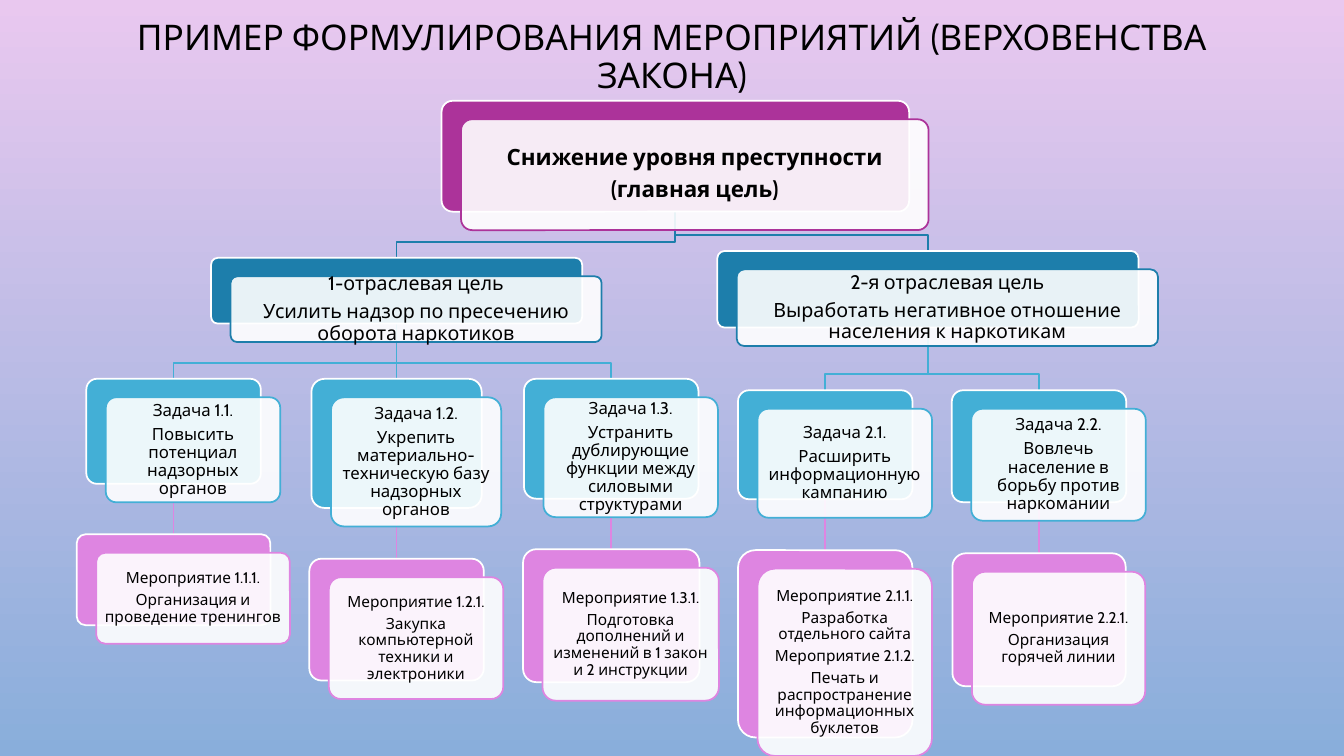
from dataclasses import dataclass, field
from typing import Iterator

import lxml.etree
import pptx
import pptx.dml.color
import pptx.enum.dml
import pptx.enum.shapes
import pptx.enum.text
import pptx.oxml.ns
import pptx.shapes.autoshape
import pptx.shapes.base
import pptx.slide
import pptx.text.text
import pptx.util

Pt = pptx.util.Pt
RGB = pptx.dml.color.RGBColor.from_string
qn = pptx.oxml.ns.qn


@dataclass(frozen=True)
class Level:
    color: str
    size: float
    bold: bool = False


@dataclass(frozen=True)
class Theme:
    font: str = "Cabin"
    text: str = "000000"
    card: str = "FFFFFF"
    card_opacity: int = 90
    bg_top: str = "E9C8EF"
    bg_bottom: str = "89AEDB"
    title_size: float = 25.2
    line_width: float = 1.25
    levels: tuple[Level, ...] = (
        Level("AC339A", 16, True),
        Level("1D7EAB", 14),
        Level("43AFD6", 12),
        Level("DE85E1", 11),
    )


@dataclass(frozen=True)
class Node:
    """A box of the goal tree, placed by its horizontal centre and its top."""
    center: float
    top: float
    width: float
    height: float
    lines: list[str]
    children: list["Node"] = field(default_factory=list)


THEME = Theme()
CARD_DX, CARD_DY = 13.9, 13.2
BEND = 11.4  # height of a bend above the child box

TITLE = "ПРИМЕР ФОРМУЛИРОВАНИЯ МЕРОПРИЯТИЙ (ВЕРХОВЕНСТВА ЗАКОНА)"

TREE = Node(482.4, 72, 334, 79.2, ["Снижение уровня преступности", "(главная цель)"], [
    Node(283.3, 184.2, 265, 46.9,
         ["1-отраслевая цель", "Усилить надзор по пресечению оборота наркотиков"], [
        Node(124, 270.6, 124.6, 75,
             ["Задача 1.1.", "Повысить потенциал надзорных органов"], [
            Node(124, 381.6, 138.4, 65,
                 ["Мероприятие 1.1.1.", "Организация и проведение тренингов"])]),
        Node(283.3, 270.6, 121.6, 92.2,
             ["Задача 1.2.", "Укрепить материально-техническую базу надзорных органов"], [
            Node(283.3, 399.1, 124.6, 87,
                 ["Мероприятие 1.2.1.", "Закупка компьютерной техники и электроники"])]),
        Node(436.6, 270.6, 124.6, 85.6,
             ["Задача 1.3.", "Устранить дублирующие функции между силовыми структурами"], [
            Node(436.6, 392.3, 126, 95,
                 ["Мероприятие 1.3.1.",
                  "Подготовка дополнений и изменений в 1 закон и 2 инструкции"])]),
    ]),
    Node(662.8, 179.2, 301, 54.8,
         ["2-я отраслевая цель", "Выработать негативное отношение населения к наркотикам"], [
        Node(589.5, 278.8, 124.6, 77.8,
             ["Задача 2.1.", "Расширить информационную кампанию"], [
            Node(589.5, 393, 124.6, 133.8,
                 ["Мероприятие 2.1.1.", "Разработка отдельного сайта",
                  "Мероприятие 2.1.2.",
                  "Печать и распространение информационных буклетов"])]),
        Node(742.2, 278.8, 124.6, 79.9,
             ["Задача 2.2.", "Вовлечь население в борьбу против наркомании"], [
            Node(742.2, 395.2, 123.8, 95,
                 ["Мероприятие 2.2.1.", "Организация горячей линии"])]),
    ]),
])


def walk(node: Node, depth: int = 0) -> Iterator[tuple[Node, Level]]:
    yield node, THEME.levels[depth]
    for child in node.children:
        yield from walk(child, depth + 1)


def write_text(tf: pptx.text.text.TextFrame, lines: list[str], *, size: float,
               bold: bool = False, space_after: float = 0) -> None:
    tf.word_wrap = True
    tf.vertical_anchor = pptx.enum.text.MSO_ANCHOR.MIDDLE
    for i, line in enumerate(lines):
        p = tf.add_paragraph() if i else tf.paragraphs[0]
        p.alignment = pptx.enum.text.PP_ALIGN.CENTER
        p.line_spacing = 0.9
        p.space_before = Pt(0)
        p.space_after = Pt(space_after)
        r = p.add_run()
        r.text = line
        r.font.name = THEME.font
        r.font.size = Pt(size)
        r.font.bold = bold
        r.font.color.rgb = RGB(THEME.text)


def set_line(sp: pptx.shapes.base.BaseShape, color: str) -> None:
    sp.line.color.rgb = RGB(color)
    sp.line.width = Pt(THEME.line_width)


def add_box(s: pptx.slide.Slide, left: float, top: float, width: float, height: float,
            fill: str, line: str) -> pptx.shapes.autoshape.Shape:
    sp = s.shapes.add_shape(pptx.enum.shapes.MSO_SHAPE.ROUNDED_RECTANGLE,
                            Pt(left), Pt(top), Pt(width), Pt(height))
    sp.adjustments[0] = 0.1
    sp.shadow.inherit = False
    sp.fill.solid()
    sp.fill.fore_color.rgb = RGB(fill)
    set_line(sp, line)
    return sp


def add_node(s: pptx.slide.Slide, node: Node, level: Level) -> None:
    """Draw a coloured box and, shifted over it, the translucent card with its text."""
    left = node.center - node.width / 2
    add_box(s, left, node.top, node.width, node.height, level.color, THEME.card)
    card = add_box(s, left + CARD_DX, node.top + CARD_DY, node.width, node.height,
                   THEME.card, level.color)
    color = card.element.spPr.find(qn("a:solidFill"))[0]
    lxml.etree.SubElement(color, qn("a:alpha"), val=str(THEME.card_opacity * 1000))
    tf = card.text_frame
    tf.margin_left = tf.margin_right = tf.margin_top = tf.margin_bottom = Pt(0.3 * level.size)
    write_text(tf, node.lines, size=level.size, bold=level.bold,
               space_after=0.35 * level.size)


def add_link(s: pptx.slide.Slide, parent: Node, child: Node, color: str) -> None:
    x1, y1 = Pt(parent.center), Pt(parent.top + parent.height)
    x2, y2 = Pt(child.center), Pt(child.top)
    if x1 == x2:
        sp = s.shapes.add_connector(pptx.enum.shapes.MSO_CONNECTOR.STRAIGHT, x1, y1, x2, y2)
        lxml.etree.SubElement(sp.element.spPr, qn("a:effectLst"))
    else:
        bend = Pt(child.top - BEND)
        path = s.shapes.build_freeform(x1, y1)
        path.add_line_segments([(x1, bend), (x2, bend), (x2, y2)], close=False)
        sp = path.convert_to_shape()
        sp.fill.background()
        sp.shadow.inherit = False
    set_line(sp, color)


def set_background(s: pptx.slide.Slide) -> None:
    fill = s.background.fill
    fill.gradient()
    fill.gradient_angle = 270
    for stop, color in zip(fill.gradient_stops, (THEME.bg_top, THEME.bg_bottom)):
        stop.color.rgb = RGB(color)


def main() -> None:
    prs = pptx.Presentation()
    prs.slide_width, prs.slide_height = Pt(960), Pt(540)
    s = prs.slides.add_slide(prs.slide_layouts[6])
    set_background(s)
    title = s.shapes.add_textbox(Pt(72), Pt(18.7), Pt(816), Pt(45.4))
    write_text(title.text_frame, [TITLE], size=THEME.title_size)
    level_of = {id(node): level for node, level in walk(TREE)}
    for node, _ in walk(TREE):
        for child in node.children:
            add_link(s, node, child, level_of[id(child)].color)
    for node, level in walk(TREE):
        add_node(s, node, level)
    prs.save("out.pptx")


if __name__ == "__main__":
    main()
